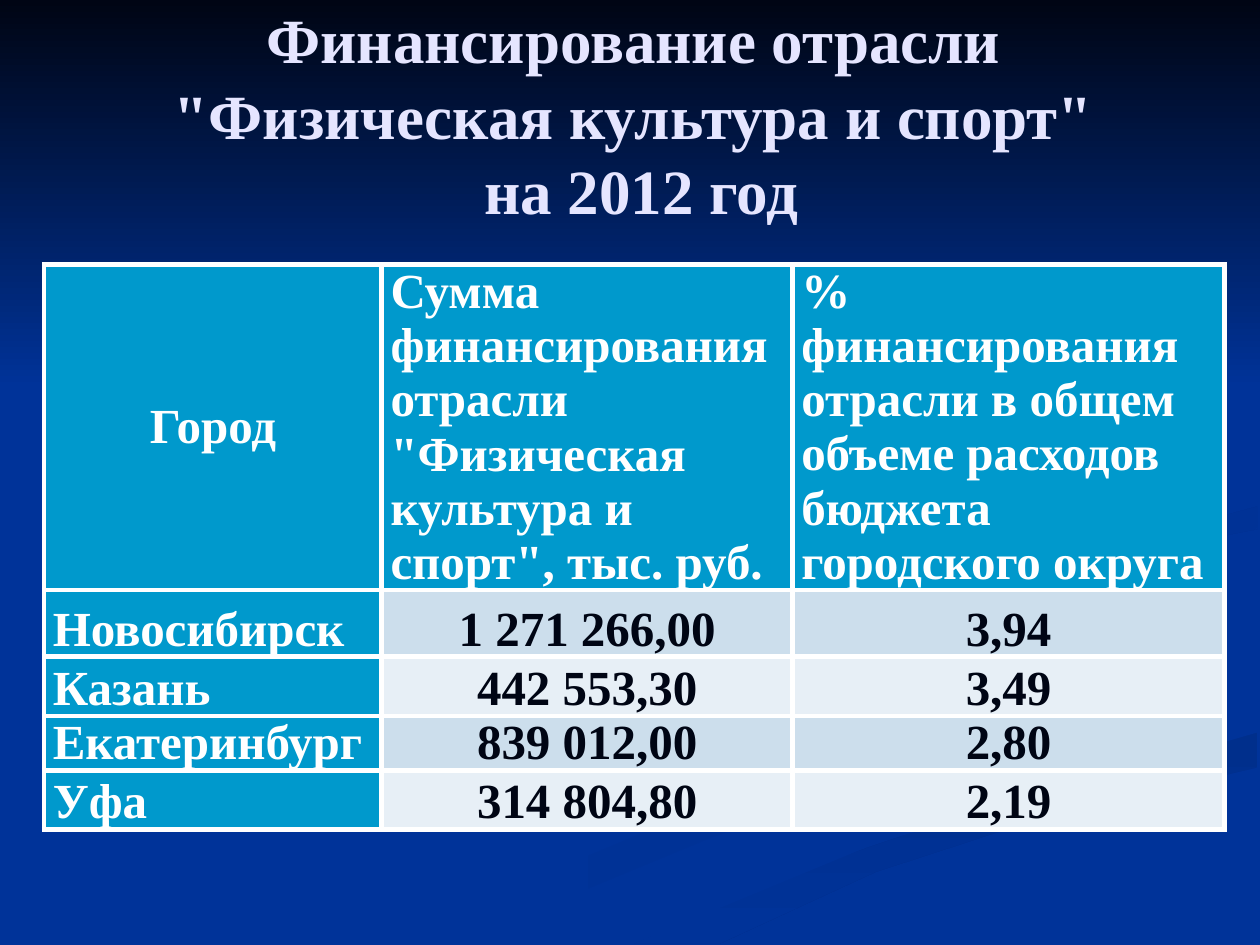
from lxml import etree
from pptx import Presentation
from pptx.dml.color import RGBColor
from pptx.enum.text import MSO_ANCHOR, MSO_AUTO_SIZE, PP_ALIGN
from pptx.oxml.ns import qn
from pptx.util import Inches, Pt

LEFT, CENTER = PP_ALIGN.LEFT, PP_ALIGN.CENTER
TOP, MIDDLE, BOTTOM = MSO_ANCHOR.TOP, MSO_ANCHOR.MIDDLE, MSO_ANCHOR.BOTTOM
FIXED = MSO_AUTO_SIZE.NONE

# Content
TITLE = ["Финансирование отрасли ", '"Физическая культура и спорт" ', "на 2012 год"]
HEAD = [
    "Город",
    'Сумма финансирования отрасли "Физическая культура и спорт", тыс. руб.',
    "% финансирования отрасли в общем объеме расходов бюджета городского округа",
]
ROWS = [
    ("Новосибирск", "1 271 266,00", "3,94"),
    ("Казань", "442 553,30", "3,49"),
    ("Екатеринбург", "839 012,00", "2,80"),
    ("Уфа", "314 804,80", "2,19"),
]
COLS = [2.68, 3.26, 3.43]
HEIGHTS = [2.58, 0.53, 0.47, 0.43, 0.47]

THEME = {
    "back": "003399",
    "accent": "0099CC",
    "bands": ("CCDEEC", "E7EFF6"),
    "rule": "FFFFFF",
    "title": {"name": "Times New Roman", "size": Pt(36), "bold": True, "color": "E5E5FF"},
    "label": {"name": "Times New Roman", "size": Pt(28), "bold": True, "color": "FFFFFF"},
    "value": {"name": "Times New Roman", "size": Pt(28), "bold": True, "color": "000514"},
}

# Backdrop: (first colour, last colour, clockwise angle, points in 1/100 inch)
WAVES = [
    ("003399", "003193", 0, [
        (575, 459), (786, 566), (539, 649), (300, 749),
        (361, 749), (564, 665), (800, 581)]),
    ("003399", "003193", 45, [
        (724, 464), (917, 576), (894, 605), (943, 570)]),
    ("002F8C", "003399", 90, [
        (503, 749), (571, 749), (695, 692), (821, 651),
        (998, 609), (998, 581), (764, 647), (630, 693)]),
    ("003399", "003399", 0, [
        (725, 464), (943, 570), (704, 655), (477, 749), (503, 749),
        (696, 669), (999, 581), (999, 538), (781, 463), (999, 402), (999, 387)]),
    ("003091", "003399", 45, [
        (781, 460), (826, 496), (828, 453), (998, 420), (998, 402)]),
    ("002F8E", "003399", 45, [
        (762, 233), (889, 335), (577, 462), (622, 500), (601, 456), (893, 335)]),
    ("000514", "003399", 90, [(0, 0), (0, 308), (1000, 308), (1000, 0)]),
]


def style(para, text, look, align):
    para.alignment = align
    run = para.add_run()
    run.text = text
    for key in ("name", "size", "bold"):
        setattr(run.font, key, look[key])
    run.font.color.rgb = RGBColor.from_string(look["color"])


def draw_wave(slide, first, last, angle, points):
    pen = slide.shapes.build_freeform(*points[0], scale=Inches(0.01))
    pen.add_line_segments(points[1:], close=True)
    wave = pen.convert_to_shape()
    wave.shadow.inherit = False
    wave.line.fill.background()
    if first == last:
        wave.fill.solid()
        wave.fill.fore_color.rgb = RGBColor.from_string(first)
        return
    wave.fill.gradient()
    wave.fill.gradient_angle = (360 - angle) % 360
    for stop, tone in zip(wave.fill.gradient_stops, (first, last)):
        stop.color.rgb = RGBColor.from_string(tone)


def rule_cell(cell):
    props = cell._tc.get_or_add_tcPr()
    for side in ("lnL", "lnR", "lnT", "lnB"):
        line = etree.SubElement(props, qn(f"a:{side}"), w=str(Pt(3)))
        fill = etree.SubElement(line, qn("a:solidFill"))
        etree.SubElement(fill, qn("a:srgbClr"), val=THEME["rule"])


def fill_cell(cell, text, row, col):
    label = row == 0 or col == 0
    tone = THEME["accent"] if label else THEME["bands"][(row - 1) % 2]
    anchor = (MIDDLE, BOTTOM, TOP)[col] if row == 0 else BOTTOM
    align = CENTER if not label or row == col else LEFT
    form = {"margin_left": Inches(0.07), "margin_right": Inches(0.07),
            "margin_top": 0, "margin_bottom": 0, "vertical_anchor": anchor}
    for key, value in form.items():
        setattr(cell, key, value)
    rule_cell(cell)
    cell.fill.solid()
    cell.fill.fore_color.rgb = RGBColor.from_string(tone)
    look = THEME["label" if label else "value"]
    style(cell.text_frame.paragraphs[0], text, look, align)


def main():
    deck = Presentation()
    deck.slide_width, deck.slide_height = Inches(10), Inches(7.5)
    slide = deck.slides.add_slide(deck.slide_layouts[5])
    slide.background.fill.solid()
    slide.background.fill.fore_color.rgb = RGBColor.from_string(THEME["back"])

    # Backdrop
    for wave in WAVES:
        draw_wave(slide, *wave)

    # Table
    frame = slide.shapes.add_table(
        len(HEIGHTS), len(COLS), Inches(0.35), Inches(2.1),
        Inches(sum(COLS)), Inches(sum(HEIGHTS)))
    table = frame.table
    for col, width in zip(table.columns, COLS):
        col.width = Inches(width)
    for row, height in zip(table.rows, HEIGHTS):
        row.height = Inches(height)
    for r, texts in enumerate([HEAD, *ROWS]):
        for c, text in enumerate(texts):
            fill_cell(table.cell(r, c), text, r, c)

    # Title, brought in front of the backdrop
    title = slide.shapes.title
    title.element.getparent().append(title.element)
    place = {"left": 0.59, "top": 0.28, "width": 9, "height": 1.25}
    for key, value in place.items():
        setattr(title, key, Inches(value))
    box = title.text_frame
    for key, value in {"auto_size": FIXED, "word_wrap": True,
                       "vertical_anchor": MIDDLE}.items():
        setattr(box, key, value)
    for i, text in enumerate(TITLE):
        para = box.add_paragraph() if i else box.paragraphs[0]
        para.line_spacing = Pt(43)
        style(para, text, THEME["title"], CENTER)

    deck.save("out.pptx")


if __name__ == "__main__":
    main()
